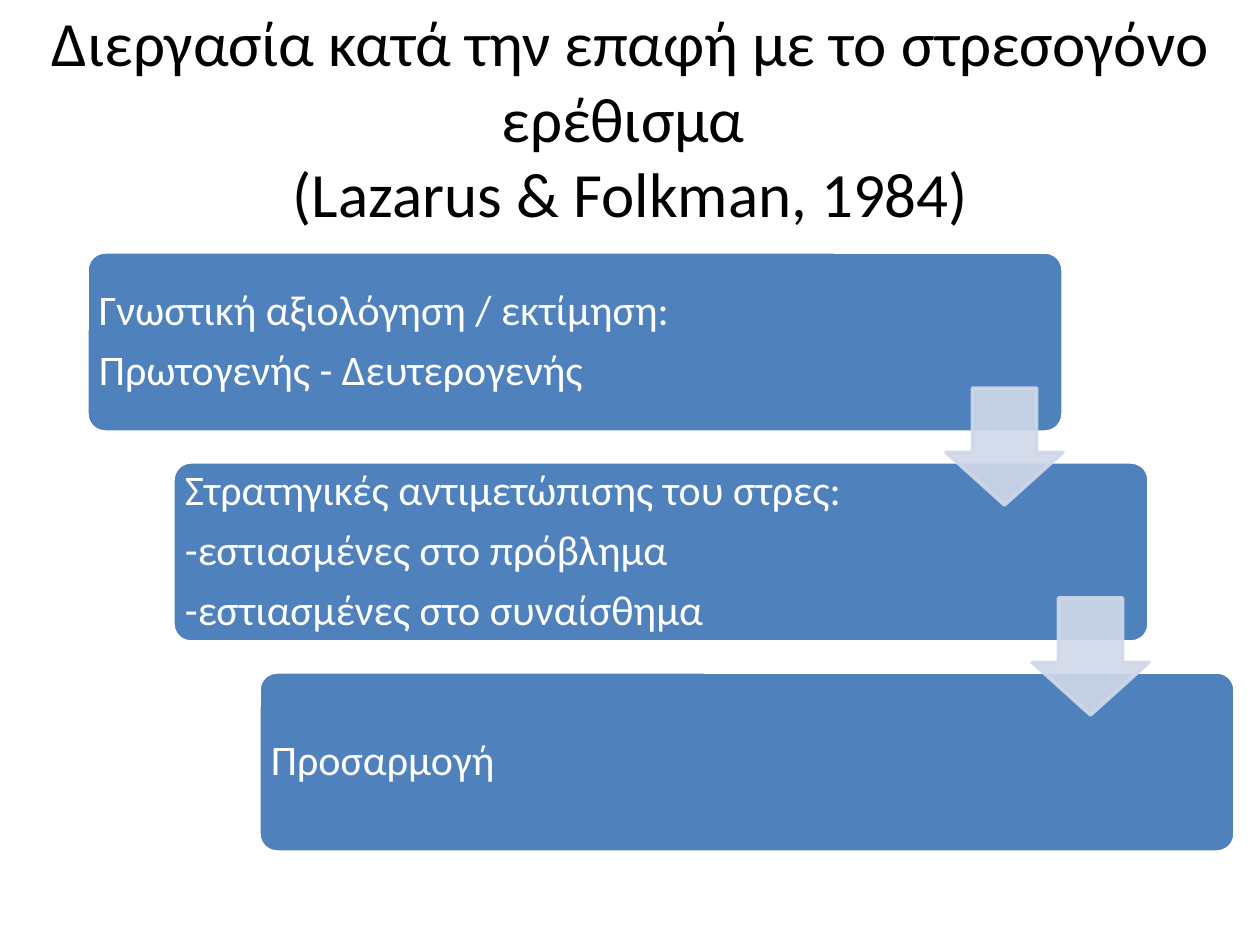
"""Builds a slide with a three-step staircase process on coping with stress."""
from lxml import etree
from pptx import Presentation
from pptx.dml.color import RGBColor
from pptx.enum.shapes import MSO_SHAPE
from pptx.enum.text import MSO_ANCHOR, PP_ALIGN
from pptx.oxml.ns import qn
from pptx.util import Pt

PX = 914400 / 126
ROUND_RECT, DOWN_ARROW = MSO_SHAPE.ROUNDED_RECTANGLE, MSO_SHAPE.DOWN_ARROW
MIDDLE, LEFT, CENTER = MSO_ANCHOR.MIDDLE, PP_ALIGN.LEFT, PP_ALIGN.CENTER
BLUE, PALE, WHITE, BLACK = "4F81BD", "D0D8E8", "FFFFFF", "000000"
STEP_X, STEP_Y = 86, 210
STEPS = [
    (793, ["Γνωστική αξιολόγηση / εκτίμηση:", "Πρωτογενής - Δευτερογενής"]),
    (774, ["Στρατηγικές αντιμετώπισης του στρες:",
           "-εστιασμένες στο πρόβλημα", "-εστιασμένες στο συναίσθημα"]),
    (774, ["Προσαρμογή"]),
]


def box(*lengths):
    return [round(n * PX) for n in lengths]


def write(tf, lines, size, color, align=LEFT, spacing=None, after=None):
    tf.word_wrap = True
    tf.vertical_anchor = MIDDLE
    for i, line in enumerate(lines):
        p = tf.add_paragraph() if i else tf.paragraphs[0]
        p.text = line
        p.alignment = align
        p.line_spacing = spacing
        p.space_after = after
        for r in p.runs:
            r.font.name = "Calibri"
            r.font.size = Pt(size)
            r.font.color.rgb = RGBColor.from_string(color)


prs = Presentation()
prs.slide_width, prs.slide_height = box(1260, 945)
s = prs.slides.add_slide(prs.slide_layouts[5])

title = s.shapes.title
title.left, title.top, title.width, title.height = box(25, 38, 1211, 158)
write(title.text_frame,
      ["Διεργασία κατά την επαφή με το στρεσογόνο ερέθισμα \v(Lazarus & Folkman, 1984)"],
      36, BLACK, align=CENTER)

shapes = [(ROUND_RECT, 87 + i * STEP_X, 252 + i * STEP_Y, 976, 180, [0.1], BLUE, WHITE)
          for i in range(3)]
shapes += [(DOWN_ARROW, 946 + i * STEP_X, 388 + i * STEP_Y, 117, 117, [0.55, 0.45], PALE, PALE)
           for i in range(2)]

for kind, x, y, w, h, adjustments, fill, line in shapes:
    sp = s.shapes.add_shape(kind, *box(x, y, w, h))
    sp.shadow.inherit = False
    for i, value in enumerate(adjustments):
        sp.adjustments[i] = value
    sp.fill.solid()
    sp.fill.fore_color.rgb = RGBColor.from_string(fill)
    sp.line.color.rgb = RGBColor.from_string(line)
    sp.line.width = Pt(2)
    if kind == DOWN_ARROW:
        for clr in sp.element.spPr.iter(qn("a:srgbClr")):
            etree.SubElement(clr, qn("a:alpha"), val="90000")

for i, (width, lines) in enumerate(STEPS):
    tb = s.shapes.add_textbox(*box(87 + i * STEP_X, 252 + i * STEP_Y, width, 180))
    tf = tb.text_frame
    tf.margin_left, tf.margin_top, tf.margin_right, tf.margin_bottom = box(12, 12, 12, 12)
    write(tf, lines, 24, WHITE, spacing=0.9, after=Pt(8.4))

prs.save("out.pptx")
